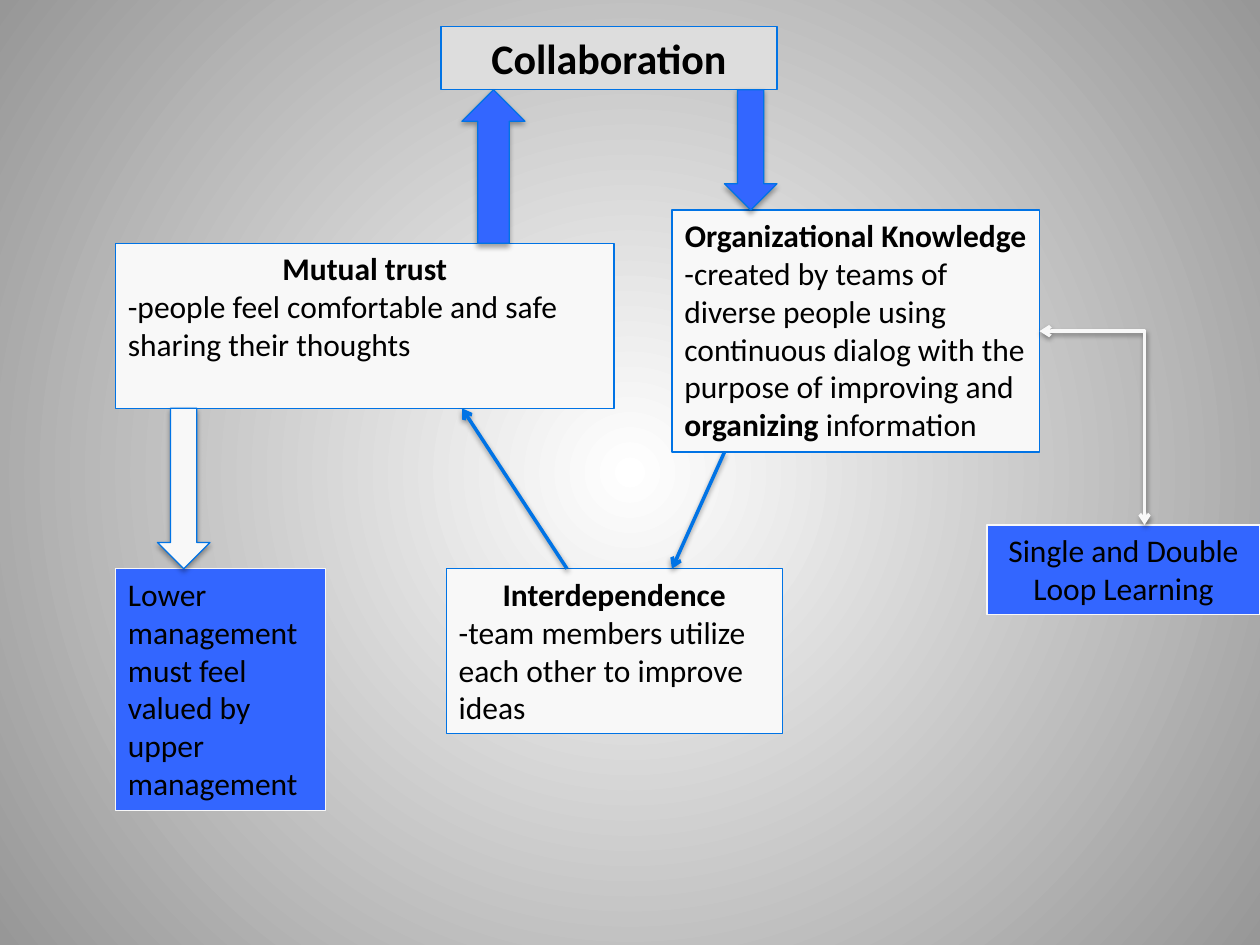
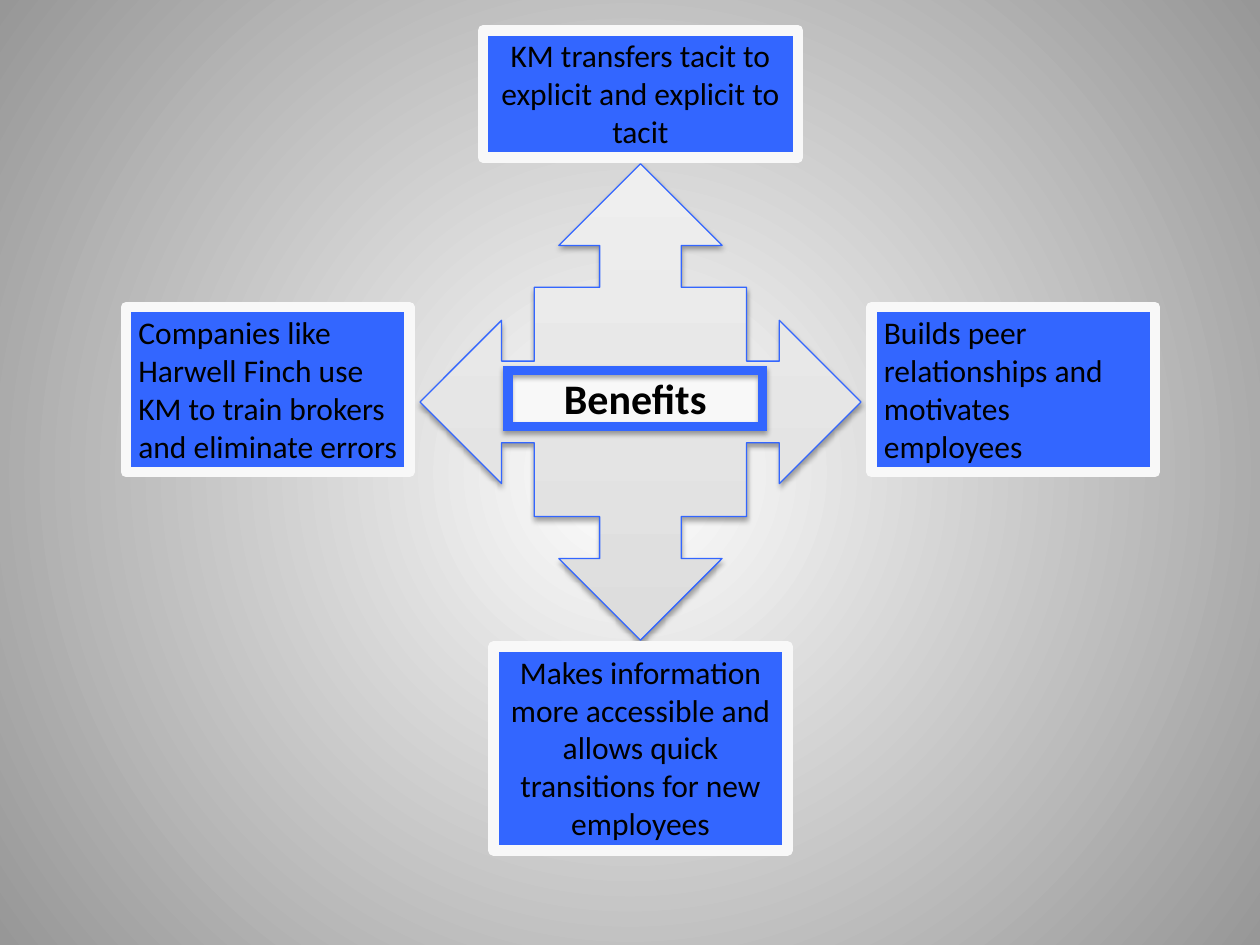
import pptx
import pptx.util
import pptx.dml.color
import pptx.enum.shapes
import pptx.enum.text
import pptx.oxml
import pptx.oxml.ns

Pt = pptx.util.Pt
qn = pptx.oxml.ns.qn
SHAPE = pptx.enum.shapes.MSO_SHAPE
CONNECTOR = pptx.enum.shapes.MSO_CONNECTOR
ALIGN = pptx.enum.text.PP_ALIGN

# Shared style
FONT, BODY, TITLE = "Calibri", 18, 24
BLACK, WHITE, GREY = "000000", "F8F8F8", "DDDDDD"
BLUE, SKY = "3366FF", "0073E5"
THIN, ARROW, THICK = 0.75, 2, 6

# Slide 1 content: name -> (left, top, width, height), heading, text; *stars* mark bold
COLLABORATION = (252, 15, 192, 36.3)
CONCEPTS = {
    "knowledge": ((384, 120, 210, 138.3), "Organizational Knowledge",
                  "-created by teams of diverse people using continuous dialog with the "
                  "purpose of improving and *organizing *information"),
    "interdependence": ((255, 325, 192, 94.3), "Interdependence",
                        "-team members utilize each other to improve ideas"),
    "trust": ((66, 139, 285, 94.3), "Mutual trust",
              "-people feel comfortable and safe sharing their thoughts"),
}
REMARKS = {
    "learning": ((564, 300, 156, 51), "Single and Double Loop Learning", ALIGN.CENTER),
    "management": ((66, 325, 120, 138.3),
                   "Lower management must feel valued by upper management", ALIGN.LEFT),
}

# Slide 2 content: centre line, gap beside the cross, and the four benefits around it
CENTRE, SIDE_GAP = 366, 6
CROSS_W, CROSS_TOP, CROSS_H = 252, 93.6, 272.2
BENEFITS = (CENTRE - 75 - 3, 209.5, 150, 36.3)
SIDE_W, SIDE_TOP, SIDE_H = 162, 175.5, 94.3
SIDES = [
    (-1, "Companies like Harwell Finch use KM to train brokers and eliminate errors"),
    (1, "Builds peer relationships and motivates employees"),
]
ENDS = [  # width, top, height, text
    (180, 17.3, 72.7, "KM transfers tacit to explicit and explicit to tacit"),
    (168, 369.5, 116.5, "Makes information more accessible and allows quick "
                        "transitions for new employees"),
]


def rgb(color):
    return pptx.dml.color.RGBColor.from_string(color)


def paint(sp, fill, line, width=THIN):
    if fill:
        sp.fill.solid()
        sp.fill.fore_color.rgb = rgb(fill)
    sp.line.color.rgb = rgb(line)
    sp.line.width = Pt(width)


def add_shadow(sp, alpha, dist):
    """Soft shadow straight below the shape."""
    sp.element.spPr.append(pptx.oxml.parse_xml(
        f'<a:effectLst {pptx.oxml.ns.nsdecls("a")}>'
        f'<a:outerShdw blurRad="{Pt(3.1)}" dist="{Pt(dist)}" dir="5400000" rotWithShape="0">'
        f'<a:srgbClr val="{BLACK}"><a:alpha val="{alpha * 1000}"/></a:srgbClr>'
        '</a:outerShdw></a:effectLst>'))


def write(tf, paragraphs, size=BODY):
    """Fill a frame from (text, alignment, bold) paragraphs."""
    tf.word_wrap = True
    tf.auto_size = pptx.enum.text.MSO_AUTO_SIZE.NONE
    tf.vertical_anchor = pptx.enum.text.MSO_ANCHOR.TOP
    for i, (text, align, bold) in enumerate(paragraphs):
        p = tf.add_paragraph() if i else tf.paragraphs[0]
        p.alignment = align
        p.font.name, p.font.size, p.font.bold = FONT, Pt(size), bold
        p.font.color.rgb = rgb(BLACK)
        for j, part in enumerate(text.split("*")):
            r = p.add_run()
            r.text = part
            if j % 2:
                r.font.bold = True


def add_box(s, place, paragraphs, fill, line, width=THIN):
    sp = s.shapes.add_textbox(*map(Pt, place))
    paint(sp, fill, line, width)
    write(sp.text_frame, paragraphs)


def place_title(s, place, text, fill, line):
    """Style the title and bring it in front of the shapes drawn so far."""
    sp = s.shapes.title
    sp.left, sp.top, sp.width, sp.height = map(Pt, place)
    paint(sp, fill, line)
    write(sp.text_frame, [(text, ALIGN.CENTER, True)], TITLE)
    sp.element.getparent().append(sp.element)


def add_shape(s, kind, place, fill, line):
    sp = s.shapes.add_shape(kind, *map(Pt, place))
    paint(sp, fill, line)
    add_shadow(sp, 35, 1.8)
    return sp


def add_arrow(s, kind, start, end, color, ends=("tailEnd",)):
    sp = s.shapes.add_connector(kind, *map(Pt, start + end))
    paint(sp, None, color, ARROW)
    ln = sp.element.spPr.find(qn("a:ln"))
    for name in ends:
        ln.append(ln.makeelement(qn("a:" + name), {"type": "arrow"}))
    add_shadow(sp, 38, 1.6)
    return sp


def bottom(place):
    return place[1] + place[3]


def set_background(master):
    """White centre fading to grey, on every slide."""
    fill = master.background.fill
    fill.gradient()
    for stop, color in zip(fill.gradient_stops, ("FFFFFF", "979797")):
        stop.color.rgb = rgb(color)
    grad = master.element.find(".//" + qn("a:gradFill"))
    grad.replace(grad.find(qn("a:lin")), pptx.oxml.parse_xml(
        f'<a:path {pptx.oxml.ns.nsdecls("a")} path="circle">'
        '<a:fillToRect l="50000" t="50000" r="50000" b="50000"/></a:path>'))


def build_collaboration(s):
    place_title(s, COLLABORATION, "Collaboration", GREY, SKY)
    for place, heading, text in CONCEPTS.values():
        add_box(s, place, [(heading, ALIGN.CENTER, True), (text, ALIGN.LEFT, False)],
                WHITE, SKY)
    for place, text, align in REMARKS.values():
        add_box(s, place, [(text, align, False)], BLUE, WHITE)

    # Block arrows fill the space between an upper and a lower box
    knowledge, interdependence, trust = (c[0] for c in CONCEPTS.values())
    learning, management = (c[0] for c in REMARKS.values())
    for kind, left, width, upper, lower, fill in [
        (SHAPE.DOWN_ARROW, 414, 30, COLLABORATION, knowledge, BLUE),
        (SHAPE.UP_ARROW, 264, 36, COLLABORATION, trust, BLUE),
        (SHAPE.DOWN_ARROW, 90, 30, trust, management, WHITE),
    ]:
        top = bottom(upper)
        add_shape(s, kind, (left, top, width, lower[1] - top), fill, SKY)

    # Thin arrows
    add_arrow(s, CONNECTOR.STRAIGHT, (414, bottom(knowledge)), (384, interdependence[1]), SKY)
    add_arrow(s, CONNECTOR.STRAIGHT, (324, interdependence[1]), (264, bottom(trust)), SKY)
    elbow = add_arrow(s, CONNECTOR.ELBOW, (knowledge[0] + knowledge[2], 189.2),
                      (654, learning[1]), WHITE, ("headEnd", "tailEnd"))
    elbow.element.spPr.find(qn("a:prstGeom")).set("prst", "bentConnector2")


def build_benefits(s):
    # Four-way arrow with the framed title
    cross = add_shape(s, SHAPE.QUAD_ARROW_CALLOUT,
                      (CENTRE - CROSS_W / 2, CROSS_TOP, CROSS_W, CROSS_H), None, BLUE)
    cross.fill.gradient()
    cross.fill.gradient_angle = 90
    for stop, color in zip(cross.fill.gradient_stops, (GREY, "EFEFEF")):
        stop.color.rgb = rgb(color)
    place_title(s, BENEFITS, "Benefits", WHITE, BLUE)
    add_shape(s, SHAPE.FRAME, BENEFITS, BLUE, BLUE)

    # Benefits at the four arrowheads
    for side, text in SIDES:
        middle = CENTRE + side * (CROSS_W / 2 + SIDE_GAP + SIDE_W / 2)
        add_box(s, (middle - SIDE_W / 2, SIDE_TOP, SIDE_W, SIDE_H),
                [(text, ALIGN.LEFT, False)], BLUE, WHITE, THICK)
    for width, top, height, text in ENDS:
        add_box(s, (CENTRE - width / 2, top, width, height),
                [(text, ALIGN.CENTER, False)], BLUE, WHITE, THICK)


def main():
    prs = pptx.Presentation()
    prs.slide_width, prs.slide_height = Pt(720), Pt(540)
    set_background(prs.slide_master)
    for build in (build_collaboration, build_benefits):
        build(prs.slides.add_slide(prs.slide_layouts[5]))
    prs.save("out.pptx")


if __name__ == "__main__":
    main()
